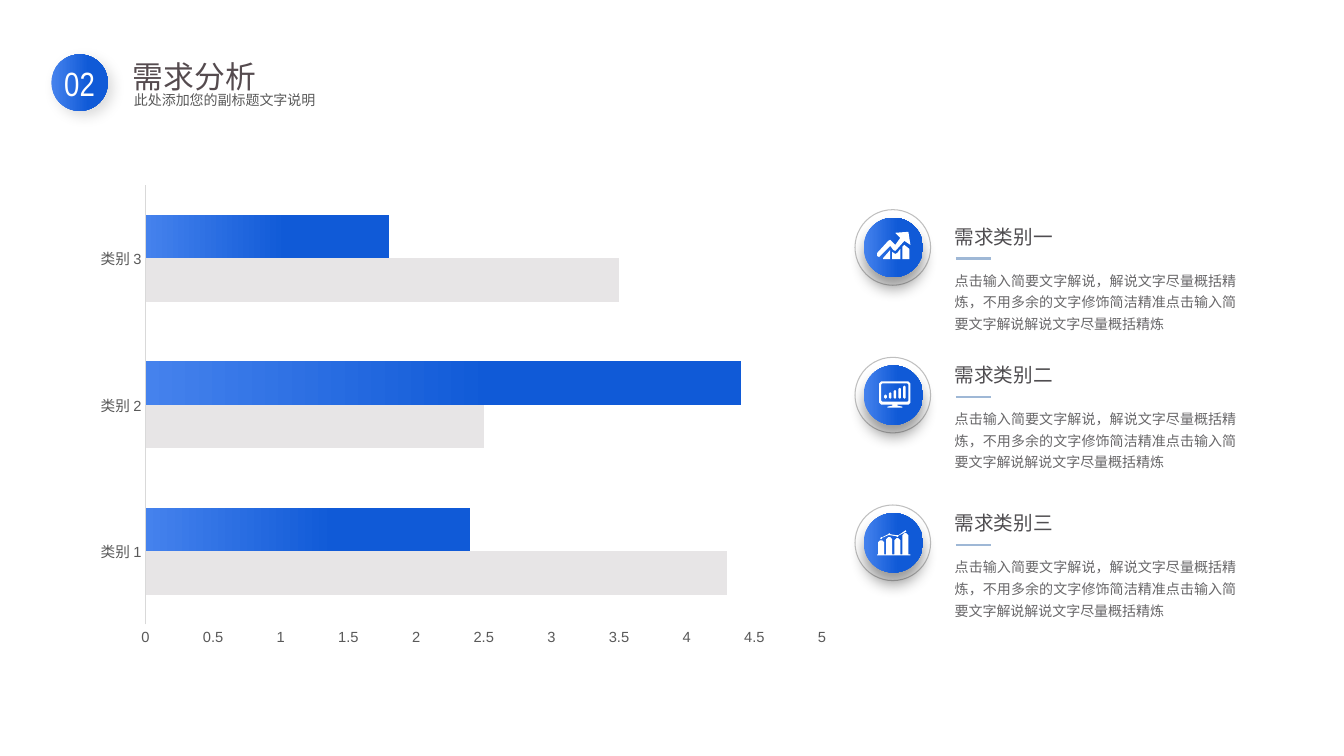
from dataclasses import dataclass

from lxml import etree
from pptx import Presentation
from pptx import util as u
from pptx.chart.data import CategoryChartData
from pptx.dml.color import RGBColor
from pptx.enum import chart as charts, shapes, text
from pptx.oxml.ns import qn


@dataclass(frozen=True)
class Theme:
    """Colours, fonts and type sizes of the slide."""
    blue_light: str = "4582ED"
    blue: str = "105AD7"
    white: str = "FFFFFF"
    bar_grey: str = "E7E5E6"
    ring: str = "BFBFBF"
    rule: str = "9FB8D6"
    axis_line: str = "D9D9D9"
    axis_text: str = "595959"
    title: str = "554B4F"
    heading: str = "4F4D50"
    body: str = "686769"
    font: str = "Noto Sans CJK SC"
    chart_font: str = "Arial"
    number_font: str = "Arial Narrow"
    number_size: float = 24
    title_size: float = 22
    heading_size: float = 14
    axis_size: float = 10.5
    body_size: float = 10


def cell(count):
    """Turn a count of grid columns or rows, ten to the inch, into a length."""
    return u.Inches(count / 10)


def apply(target, values):
    """Set every attribute in a dict of format values."""
    for name, value in values.items():
        setattr(target, name, value)


def rounded_bar(left, top, right, bottom, bevel, foot=0):
    """Outline a bar with a bevelled top and an optional bevelled foot."""
    return [(left, top + bevel), (left + bevel, top), (right - bevel, top), (right, top + bevel),
            (right, bottom - foot), (right - foot, bottom), (left + foot, bottom), (left, bottom - foot)]


class SlideBuilder:
    """Draws styled elements on the current slide."""

    def __init__(self, slide, theme):
        self.slide, self.theme = slide, theme

    def gradient(self, fill, start=0, end=0.58):
        """Fill with the blue gradient from left to right."""
        fill.gradient()
        fill.gradient_angle = 0
        stops = zip(fill.gradient_stops, (start, end), (self.theme.blue_light, self.theme.blue))
        for stop, position, colour in stops:
            stop.position = position
            stop.color.rgb = RGBColor.from_string(colour)

    def styled_text(self, frame, content, size, colour, font=None, **paragraph_format):
        """Put one styled paragraph into a text frame."""
        paragraph = frame.paragraphs[0]
        apply(paragraph, paragraph_format)
        run = paragraph.add_run()
        run.text = content
        font = font or self.theme.font
        apply(run.font, {"size": u.Pt(size), "name": font})
        run.font.color.rgb = RGBColor.from_string(colour)
        etree.SubElement(run.font._element, qn("a:ea"), typeface=font)

    def label(self, box, content, size, colour, wrap=True, **paragraph_format):
        """Add a text box that grows with its text."""
        frame = self.slide.shapes.add_textbox(*map(cell, box)).text_frame
        apply(frame, {"word_wrap": wrap, "auto_size": text.MSO_AUTO_SIZE.SHAPE_TO_FIT_TEXT})
        self.styled_text(frame, content, size, colour, line_spacing=1.3, **paragraph_format)

    def ellipse(self, left, top, size):
        """Add a plain circle without shadow."""
        shape = self.slide.shapes.add_shape(
            shapes.MSO_SHAPE.OVAL, cell(left), cell(top), cell(size), cell(size))
        shape.fill.background()
        shape.line.fill.background()
        shape.shadow.inherit = False
        return shape

    def ring(self, left, top, size):
        """Add an unfilled circle with a thin outline."""
        line = self.ellipse(left, top, size).line
        line.color.rgb = RGBColor.from_string(self.theme.ring)
        line.width = u.Pt(0.75)

    def disc(self, left, top, size, stops, opacity, blur, distance, angle):
        """Add a blue gradient circle with a soft shadow."""
        shape = self.ellipse(left, top, size)
        self.gradient(shape.fill, *stops)
        effects = shape.element.spPr.find(qn("a:effectLst"))
        shadow = etree.SubElement(
            effects, qn("a:outerShdw"), blurRad=str(u.Pt(blur)), dist=str(u.Pt(distance)),
            dir=str(angle * 60000), algn="ctr", rotWithShape="0")
        colour = etree.SubElement(shadow, qn("a:srgbClr"), val="000000")
        etree.SubElement(colour, qn("a:alpha"), val=str(opacity * 1000))
        return shape

    def icon(self, left, top, outlines):
        """Add a white outline shape measured in tenths of a grid cell."""
        scaled = [[(x * cell(0.1), y * cell(0.1)) for x, y in outline] for outline in outlines]
        builder = self.slide.shapes.build_freeform(*scaled[0][0])
        for index, outline in enumerate(scaled):
            if index:
                builder.move_to(*outline[0])
            builder.add_line_segments(outline[1:], close=True)
        shape = builder.convert_to_shape(cell(left), cell(top))
        shape.fill.solid()
        shape.fill.fore_color.rgb = RGBColor.from_string(self.theme.white)
        shape.line.fill.background()
        shape.shadow.inherit = False

    def rule(self, left, top, length):
        """Add a short horizontal line."""
        connector = self.slide.shapes.add_connector(
            shapes.MSO_CONNECTOR.STRAIGHT, cell(left), cell(top), cell(left + length), cell(top))
        connector.line.color.rgb = RGBColor.from_string(self.theme.rule)
        connector.line.width = u.Pt(1.5)
        etree.SubElement(connector.element.spPr, qn("a:effectLst"))

    def bar_chart(self, box, plot_box, categories, series):
        """Add the clustered bar chart with its last series in blue."""
        data = CategoryChartData()
        data.categories = categories
        for name, values in series.items():
            data.add_series(name, values)
        chart = self.slide.shapes.add_chart(
            charts.XL_CHART_TYPE.BAR_CLUSTERED, *map(cell, box), data).chart
        apply(chart, {"has_legend": False, "has_title": False})
        apply(chart.font, {"name": self.theme.chart_font, "size": u.Pt(self.theme.axis_size)})
        chart.font.color.rgb = RGBColor.from_string(self.theme.axis_text)
        for axis in (chart.category_axis, chart.value_axis):
            apply(axis, {"has_major_gridlines": False,
                         "major_tick_mark": charts.XL_TICK_MARK.NONE,
                         "minor_tick_mark": charts.XL_TICK_MARK.NONE})
        apply(chart.value_axis, {"minimum_scale": 0, "maximum_scale": 5, "major_unit": 0.5})
        apply(chart.value_axis.tick_labels, {"number_format": "General", "number_format_is_linked": False})
        chart.value_axis.format.line.fill.background()
        chart.category_axis.format.line.color.rgb = RGBColor.from_string(self.theme.axis_line)
        chart.category_axis.format.line.width = u.Pt(0.75)
        plot = chart.plots[0]
        apply(plot, {"gap_width": 138, "overlap": 0, "vary_by_categories": False})
        base, highlight = plot.series
        for bars, colour in ((base, self.theme.bar_grey), (highlight, self.theme.blue)):
            bars.format.fill.solid()
            bars.format.fill.fore_color.rgb = RGBColor.from_string(colour)
        for index in range(len(categories)):
            self.gradient(highlight.points[index].format.fill)
        area = chart.element.find(".//" + qn("c:plotArea"))
        for layout in area.findall(qn("c:layout")):
            area.remove(layout)
        layout = etree.Element(qn("c:layout"))
        area.insert(0, layout)
        manual = etree.SubElement(layout, qn("c:manualLayout"))
        settings = {"layoutTarget": "inner", "xMode": "edge", "yMode": "edge", **plot_box}
        for name, value in settings.items():
            etree.SubElement(manual, qn("c:" + name), val=str(value))


GROWTH_ICON = [
    [(49, 35), (47, 37), (47, 49), (54, 49), (54, 39)],
    [(35, 36), (25, 46), (24, 47), (22, 46), (22, 43), (33, 31), (35, 30), (36, 31), (40, 35),
     (45, 28), (40, 23), (53, 22), (55, 35), (49, 31), (41, 40), (40, 41), (38, 40)],
    [(42, 43), (40, 44), (37, 42), (37, 49), (45, 49), (45, 39)],
    [(28, 49), (35, 49), (35, 40), (28, 48)]]
MONITOR_ICON = [
    [(53, 24), (26, 24), (24, 26), (24, 45), (26, 47), (37, 47), (37, 48), (32, 49), (32, 50),
     (47, 50), (47, 49), (42, 48), (42, 47), (53, 47), (55, 45), (55, 26)],
    [(53, 43), (52, 44), (27, 44), (26, 43), (26, 27), (27, 26), (52, 26), (53, 27)],
    *(rounded_bar(29 + 4.7 * i, 37 - 2.2 * i, 31.5 + 4.7 * i, 41, 1, 1) for i in range(5))]
COLUMNS_ICON = [
    [(25, 33), (26, 32), (27, 32), (33, 29), (34, 28), (35, 29), (41, 30), (43, 30), (49, 26),
     (50, 25), (51, 26), (50, 27), (43, 30.5), (43, 31), (42, 32), (41, 31), (35, 30), (33, 30),
     (27, 32.5), (27, 33), (26, 34)],
    *(rounded_bar(23 + 8 * i, top, 29 + 8 * i, 49, 2) for i, top in enumerate((35, 32, 33, 28))),
    [(22, 49), (55, 49), (55, 50), (22, 50)]]
NEEDS = [("需求类别一", 21.1, GROWTH_ICON), ("需求类别二", 34.8, MONITOR_ICON), ("需求类别三", 49.5, COLUMNS_ICON)]
DESCRIPTION = "点击输入简要文字解说，解说文字尽量概括精炼，不用多余的文字修饰简洁精准点击输入简要文字解说解说文字尽量概括精炼"


def main():
    """Build the demand analysis slide."""
    presentation = Presentation()
    apply(presentation, {"slide_width": u.Inches(13.33), "slide_height": u.Inches(7.5)})
    theme = Theme()
    builder = SlideBuilder(presentation.slides.add_slide(presentation.slide_layouts[6]), theme)
    builder.bar_chart(
        (8.4, 17.4, 75.4, 47.4), {"x": 0.08, "y": 0.02, "w": 0.89, "h": 0.92},
        ["类别 1", "类别 2", "类别 3"], {"Series 1": (4.3, 2.5, 3.5), "Series 2": (2.4, 4.4, 1.8)})
    for index, (heading, top, outlines) in enumerate(NEEDS):
        ring_top = 20.8 + 14.65 * index
        builder.ring(84.8, ring_top, 7.5)
        builder.disc(85.65, ring_top + 0.8, 5.9, (0, 0.58), 40, 11, 8, 90)
        builder.icon(84.8, ring_top, outlines)
        builder.rule(94.8, top + 4.55, 3.5)
        builder.label((93.7, top + 4.9, 29.9, 9.8), DESCRIPTION, theme.body_size, theme.body,
                      alignment=text.PP_ALIGN.JUSTIFY)
        builder.label((93.7, top, 14.5, 4.1), heading, theme.heading_size, theme.heading)
    badge = builder.disc(5.1, 5.4, 5.6, (0.01, 0.66), 15, 10, 5, 45)
    apply(badge.text_frame, {"word_wrap": False, "vertical_anchor": text.MSO_ANCHOR.MIDDLE})
    builder.styled_text(badge.text_frame, "02", theme.number_size, theme.white, theme.number_font,
                        alignment=text.PP_ALIGN.CENTER)
    builder.label((12.2, 4.1, 14.4, 5.8), "需求分析", theme.title_size, theme.title, wrap=False)
    builder.label((12.3, 8.1, 33.8, 3.2), "此处添加您的副标题文字说明", theme.body_size, theme.axis_text)
    presentation.save("out.pptx")


if __name__ == "__main__":
    main()
